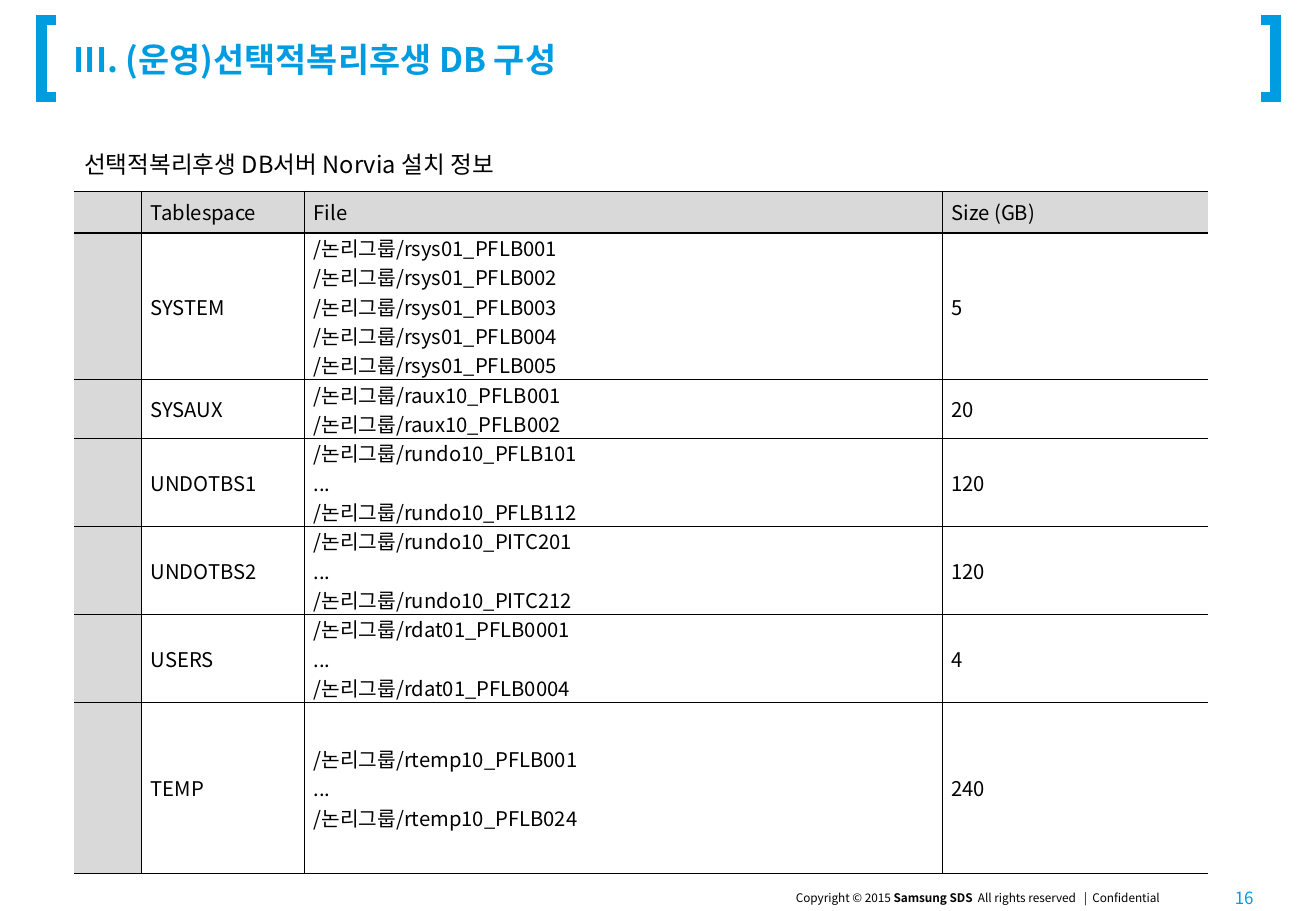
from lxml import etree
from pptx import Presentation
from pptx.dml.color import RGBColor
from pptx.enum.text import MSO_ANCHOR, PP_ALIGN
from pptx.oxml.ns import qn
from pptx.util import Emu, Pt

PX = 914400 // 120
FONT = "Noto Sans CJK KR"
LEFT, RIGHT, JUSTIFY = PP_ALIGN.LEFT, PP_ALIGN.RIGHT, PP_ALIGN.JUSTIFY
TOP, MIDDLE = MSO_ANCHOR.TOP, MSO_ANCHOR.MIDDLE
COLORS = {"brand": "009CE1", "page": "039BE7", "text": "000000",
          "border": "000000", "header": "D9D9D9"}

COLUMNS = [67, 161, 630, 262]
LINE_HEIGHT = 29
HEADER_HEIGHT = 41
LAST_HEIGHT = 169
HEADER = ("Tablespace", ["File"], "Size (GB)")
TABLESPACES = [
    ("SYSTEM", [f"rsys01_PFLB{n:03}" for n in range(1, 6)], "5"),
    ("SYSAUX", ["raux10_PFLB001", "raux10_PFLB002"], "20"),
    ("UNDOTBS1", ["rundo10_PFLB101", "...", "rundo10_PFLB112"], "120"),
    ("UNDOTBS2", ["rundo10_PITC201", "...", "rundo10_PITC212"], "120"),
    ("USERS", ["rdat01_PFLB0001", "...", "rdat01_PFLB0004"], "4"),
    ("TEMP", ["rtemp10_PFLB001", "...", "rtemp10_PFLB024"], "240"),
]


def px(n):
    return Emu(n * PX)


def rgb(name):
    return RGBColor.from_string(COLORS[name])


def write(tf, lines, size=12, color="text", bold=False, align=LEFT):
    """Fill a frame; each line is a string or a list of (text, bold) runs."""
    for i, line in enumerate(lines):
        p = tf.paragraphs[0] if i == 0 else tf.add_paragraph()
        p.alignment = align
        p.font.size = Pt(size)
        for text, strong in [(line, bold)] if isinstance(line, str) else line:
            r = p.add_run()
            r.text = text
            r.font.size, r.font.bold, r.font.name = Pt(size), strong, FONT
            r.font.color.rgb = rgb(color)
            ea = etree.SubElement(r.font._element, qn("a:ea"))
            ea.set("typeface", FONT)


def add_text(s, box, lines, margins=(12, 6, 12, 6), anchor=MIDDLE, wrap=True,
             **fmt):
    tf = s.shapes.add_textbox(*map(px, box)).text_frame
    tf.word_wrap, tf.vertical_anchor = wrap, anchor
    (tf.margin_left, tf.margin_top,
     tf.margin_right, tf.margin_bottom) = map(px, margins)
    write(tf, lines, **fmt)


def add_bracket(s, tip, spine, top, bottom):
    builder = s.shapes.build_freeform(tip, bottom, scale=PX)
    builder.add_line_segments([(spine, bottom), (spine, top), (tip, top)],
                              close=False)
    sp = builder.convert_to_shape()
    sp.shadow.inherit = False
    sp.fill.background()
    sp.line.color.rgb = rgb("brand")
    sp.line.width = Pt(6)
    ln = sp._element.spPr.find(qn("a:ln"))
    etree.SubElement(ln, qn("a:miter"), lim="800000")


def add_heading(s, x, y, w, h):
    add_bracket(s, x + 14, x, y, y + h)
    add_bracket(s, x + w - 14, x + w, y, y + h)
    add_text(s, (x + 32, y + 8, 1078, 61), ["III. (운영)선택적복리후생 DB 구성"],
             margins=(0, 6, 12, 6), wrap=False, size=20, color="brand",
             bold=True)


def set_border(cell, side, visible):
    ln = etree.SubElement(cell._tc.get_or_add_tcPr(), qn(f"a:ln{side}"),
                          w=str(Pt(1)))
    if visible:
        fill = etree.SubElement(ln, qn("a:solidFill"))
        etree.SubElement(fill, qn("a:srgbClr"), val=COLORS["border"])
    else:
        etree.SubElement(ln, qn("a:noFill"))


def format_cell(cell, shaded, first, last):
    cell.margin_left = cell.margin_right = px(9)
    cell.margin_top = cell.margin_bottom = 0
    cell.vertical_anchor = MIDDLE
    for side, visible in (("L", not first), ("R", not last),
                          ("T", True), ("B", True)):
        set_border(cell, side, visible)
    if shaded:
        cell.fill.solid()
        cell.fill.fore_color.rgb = rgb("header")
    else:
        cell.fill.background()


def add_tablespace_table(s, x, y):
    rows = [HEADER]
    for name, files, size in TABLESPACES:
        paths = [f if f == "..." else f"/논리그룹/{f}" for f in files]
        rows.append((name, paths, size))
    heights = [LINE_HEIGHT * len(files) for _, files, _ in rows]
    heights[0], heights[-1] = HEADER_HEIGHT, LAST_HEIGHT
    frame = s.shapes.add_table(len(rows), len(COLUMNS), px(x), px(y),
                               px(sum(COLUMNS)), px(sum(heights)))
    table = frame.table
    table.first_row = table.horz_banding = False
    for column, width in zip(table.columns, COLUMNS):
        column.width = px(width)
    for i, (name, files, size) in enumerate(rows):
        table.rows[i].height = px(heights[i])
        for j, lines in enumerate([[""], [name], files, [size]]):
            cell = table.cell(i, j)
            format_cell(cell, i == 0 or j == 0, j == 0, j == len(COLUMNS) - 1)
            write(cell.text_frame, lines, align=JUSTIFY if j == 1 else LEFT)


def add_footer(s, x, y):
    add_text(s, (x, y, 472, 26),
             [[("Copyright © 2015 ", False), ("Samsung SDS  ", True),
               ("All rights reserved   |  Confidential ", False)]],
             margins=(0, 6, 12, 6), anchor=TOP, size=7, align=RIGHT)
    add_text(s, (x + 505, y + 1, 57, 24), ["16"], size=10, color="page",
             align=RIGHT)


def main():
    prs = Presentation()
    prs.slide_width, prs.slide_height = px(1300), px(900)
    s = prs.slides.add_slide(prs.slide_layouts[6])
    add_heading(s, 41, 20, 1219, 76)
    add_text(s, (73, 139, 1153, 47), ["선택적복리후생 DB서버 Norvia 설치 정보"],
             margins=(10, 10, 10, 10), size=14)
    add_tablespace_table(s, 73, 189)
    add_footer(s, 688, 874)
    prs.save("out.pptx")


if __name__ == "__main__":
    main()
